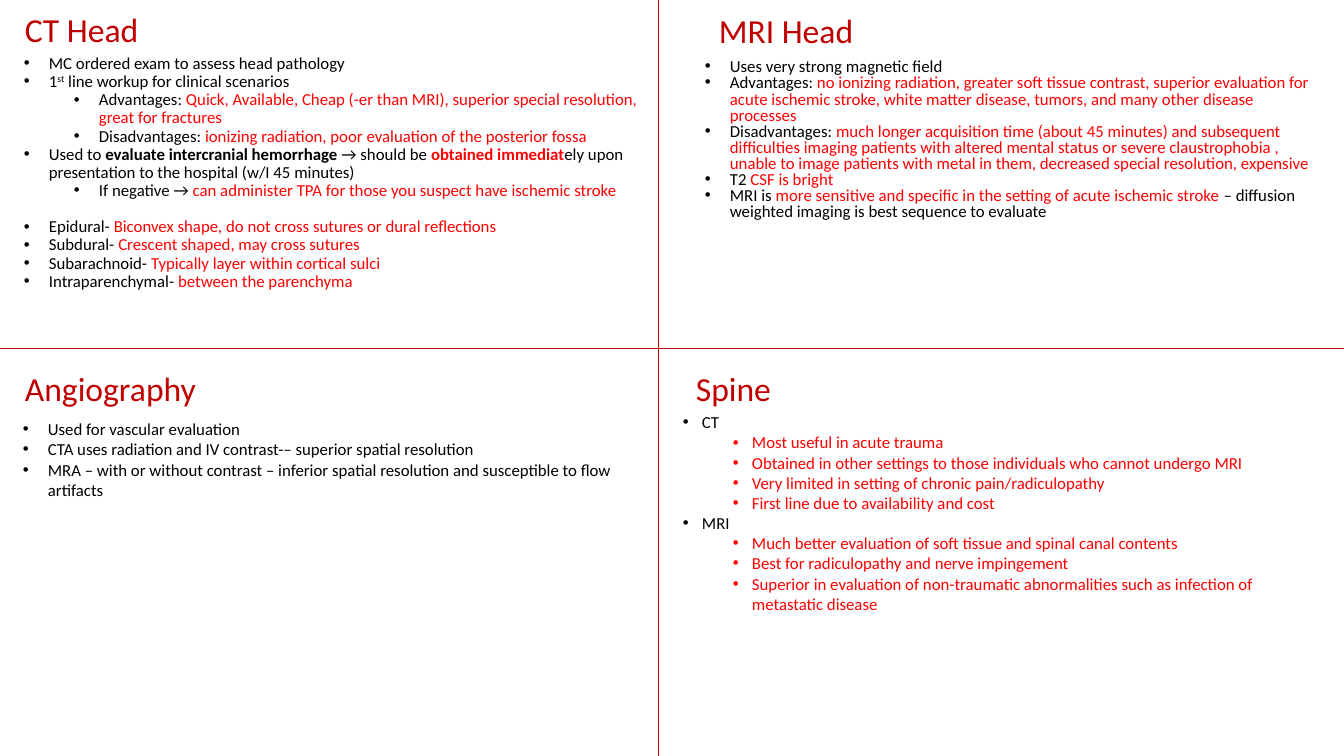
"""Build a four-quadrant slide on head and spine imaging."""
from lxml.etree import SubElement
from pptx import Presentation
from pptx.dml.color import RGBColor as RGB
from pptx.enum.shapes import MSO_CONNECTOR as Conn
from pptx.enum.text import MSO_AUTO_SIZE as Auto
from pptx.oxml.ns import qn
from pptx.util import Emu, Pt

HEX = {"title": "C00000", "black": "000000", "red": "FF0000"}
FONT = "Calibri"
WIDE, HIGH = 1344, 756
SCALE = 914400 / 100.8
STEP = 50
MID_X, MID_Y = 658, 348
RULES = [(MID_X, 0, MID_X, HIGH), (0, MID_Y, WIDE, MID_Y)]

STYLES = {
    "k": ("black", False, None),
    "kb": ("black", True, None),
    "ks": ("black", False, "30000"),
    "r": ("red", False, None),
    "rb": ("red", True, None),
}

CT = [
    (0, 0, [("k", "MC ordered exam to assess head pathology")]),
    (0, 0, [("k", "1"), ("ks", "st"), ("k", " line workup for clinical scenarios")]),
    (1, 0, [("k", "Advantages: "),
            ("r", "Quick, Available, Cheap (-er than MRI), superior special resolution, "
                  "great for fractures")]),
    (1, 0, [("k", "Disadvantages: "),
            ("r", "ionizing radiation, poor evaluation of the posterior fossa")]),
    (0, 0, [("k", "Used to "), ("kb", "evaluate intercranial hemorrhage "),
            ("k", "→ should be "), ("rb", "obtained immediat"),
            ("k", "ely upon presentation to the hospital (w/I 45 minutes)")]),
    (1, 0, [("k", "If negative → "),
            ("r", "can administer TPA for those you suspect have ischemic stroke")]),
    (0, 13, [("k", "Epidural- "),
             ("r", "Biconvex shape, do not cross sutures or dural reflections")]),
    (0, 0, [("k", "Subdural- "), ("r", "Crescent shaped, may cross sutures")]),
    (0, 0, [("k", "Subarachnoid- "), ("r", "Typically layer within cortical sulci")]),
    (0, 0, [("k", "Intraparenchymal- "), ("r", "between the parenchyma")]),
]
MRI = [
    (0, 0, [("k", "Uses very strong magnetic field")]),
    (0, 0, [("k", "Advantages: "),
            ("r", "no ionizing radiation, greater soft tissue contrast, superior evaluation "
                  "for acute ischemic stroke, white matter disease, tumors, and many other "
                  "disease processes")]),
    (0, 0, [("k", "Disadvantages: "),
            ("r", "much longer acquisition time (about 45 minutes) and subsequent "
                  "difficulties imaging patients with altered mental status or severe "
                  "claustrophobia , unable to image patients with metal in them, decreased "
                  "special resolution, expensive")]),
    (0, 0, [("k", "T2 "), ("r", "CSF is bright")]),
    (0, 0, [("k", "MRI is "),
            ("r", "more sensitive and specific in the setting of acute ischemic stroke "),
            ("k", "– diffusion weighted imaging is best sequence to evaluate")]),
]
ANGIO = [
    (0, 0, [("k", "Used for vascular evaluation")]),
    (0, 0, [("k", "CTA uses radiation and IV contrast-– superior spatial resolution")]),
    (0, 0, [("k", "MRA – with or without contrast – inferior spatial resolution and "
                  "susceptible to flow artifacts")]),
]
SPINE = [
    (0, 0, [("k", "CT")]),
    (1, 0, [("r", "Most useful in acute trauma")]),
    (1, 0, [("r", "Obtained in other settings to those individuals who cannot undergo MRI")]),
    (1, 0, [("r", "Very limited in setting of chronic pain/radiculopathy")]),
    (1, 0, [("r", "First line due to availability and cost")]),
    (0, 0, [("k", "MRI")]),
    (1, 0, [("r", "Much better evaluation of soft tissue and spinal canal contents")]),
    (1, 0, [("r", "Best for radiculopathy and nerve impingement")]),
    (1, 0, [("r", "Superior in evaluation of non-traumatic abnormalities such as infection "
                  "of metastatic disease")]),
]
PANELS = [
    ("CT Head", (15, 4), (14, 50, 644, 248), 25, 0.9, CT),
    ("MRI Head", (709, 5), (695, 55, 633, 243), 25, 0.8, MRI),
    ("Angiography", (15, 363), (13, 414, 644, 248), 25, 1.0, ANGIO),
    ("Spine", (686, 363), (673, 407, 652, 231), 19, 1.0, SPINE),
]


def px(n):
    return Emu(round(n * SCALE))


def add_rule(slide, ends):
    rule = slide.shapes.add_connector(Conn.STRAIGHT, *map(px, ends))
    rule.line.color.rgb = RGB.from_string(HEX["title"])
    rule.line.width = Pt(0.5)
    SubElement(rule._element.spPr, qn("a:effectLst"))


def add_box(slide, rect, fit):
    frame = slide.shapes.add_textbox(*map(px, rect)).text_frame
    frame.word_wrap = True
    frame.auto_size = fit
    return frame


def add_run(para, text, size, color, bold=False, base=None):
    run = para.add_run()
    run.text = text
    font = run.font
    font.name, font.size, font.bold = FONT, Pt(size), bold
    font.color.rgb = RGB.from_string(HEX[color])
    if base:
        run._r.get_or_add_rPr().set("baseline", base)


def add_bullet(para, level, hang):
    para.level = level
    props = para._p.get_or_add_pPr()
    props.set("marL", str(px(hang + level * STEP)))
    props.set("indent", str(-px(hang)))
    SubElement(props, qn("a:buFont")).set("typeface", "Arial")
    SubElement(props, qn("a:buChar")).set("char", "•")


def add_list(frame, items, hang, pitch):
    for i, (level, gap, runs) in enumerate(items):
        para = frame.add_paragraph() if i else frame.paragraphs[0]
        add_bullet(para, level, hang)
        para.line_spacing = pitch
        if gap:
            para.space_before = Pt(gap)
        for style, text in runs:
            add_run(para, text, 12, *STYLES[style])


def main():
    deck = Presentation()
    deck.slide_width, deck.slide_height = px(WIDE), px(HIGH)
    slide = deck.slides.add_slide(deck.slide_layouts[6])
    for ends in RULES:
        add_rule(slide, ends)
    for title, spot, rect, hang, pitch, items in PANELS:
        head = add_box(slide, (*spot, 586, 50), Auto.SHAPE_TO_FIT_TEXT)
        add_run(head.paragraphs[0], title, 24, "title")
        add_list(add_box(slide, rect, Auto.NONE), items, hang, pitch)
    deck.save("out.pptx")


if __name__ == "__main__":
    main()
